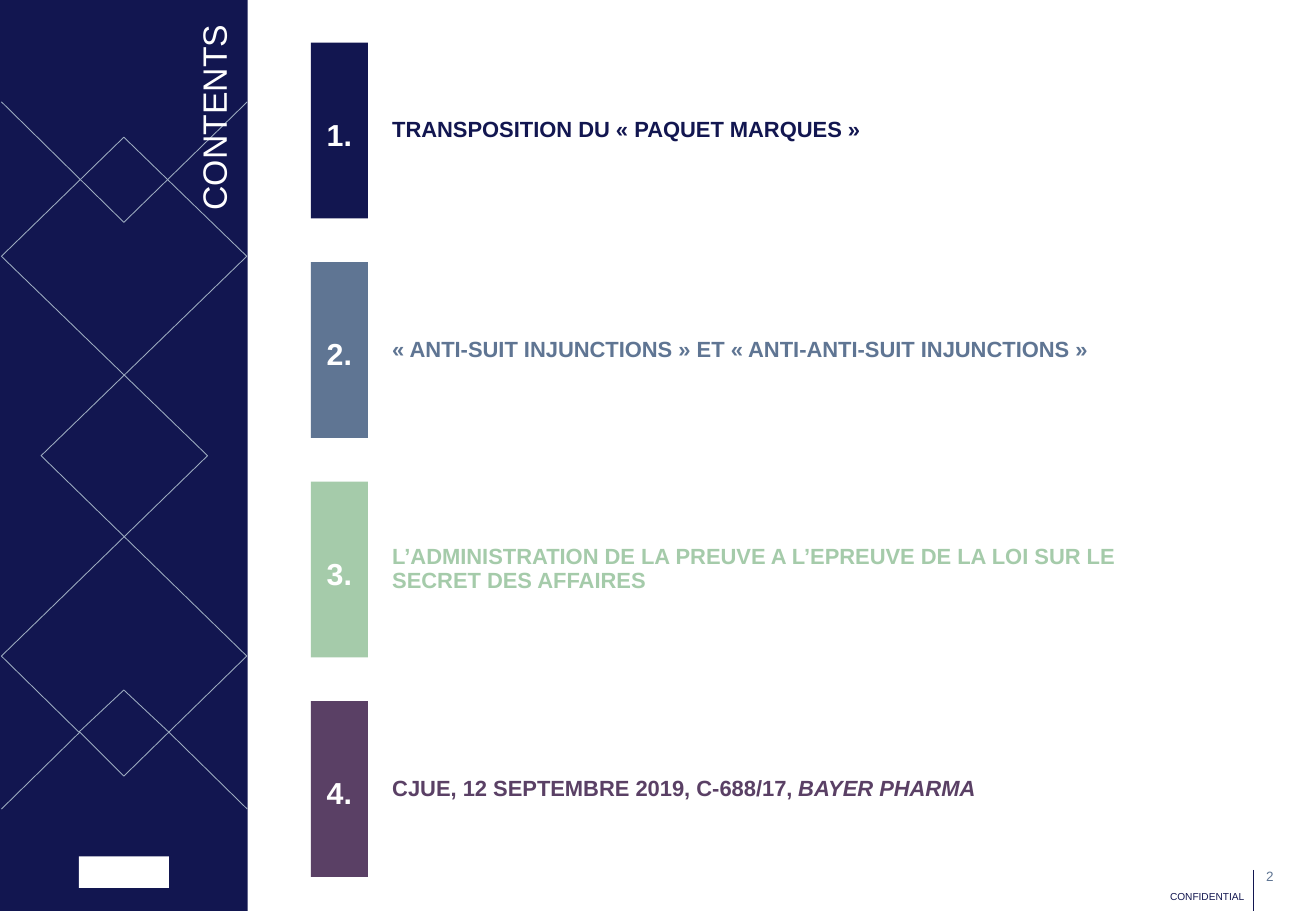
from lxml import etree
from pptx import Presentation
from pptx.dml.color import RGBColor
from pptx.enum.shapes import MSO_CONNECTOR, MSO_SHAPE
from pptx.enum.text import MSO_ANCHOR, PP_ALIGN
from pptx.oxml.ns import qn
from pptx.util import Cm, Pt

RECTANGLE = MSO_SHAPE.RECTANGLE
STRAIGHT = MSO_CONNECTOR.STRAIGHT
TOP, MIDDLE, BOTTOM = MSO_ANCHOR.TOP, MSO_ANCHOR.MIDDLE, MSO_ANCHOR.BOTTOM
LEFT, CENTER, RIGHT = PP_ALIGN.LEFT, PP_ALIGN.CENTER, PP_ALIGN.RIGHT

SLIDE_WIDTH, SLIDE_HEIGHT = 27.51, 19.05
FONT = "Arial"
NAVY, STEEL, GREEN, PLUM = "121650", "5F7593", "A5CBAA", "5A4065"
WHITE, PATTERN = "FFFFFF", "9DACC0"

# Each topic: colour, then its runs as (text, italic)
TOPICS = [
    (NAVY, [("TRANSPOSITION DU « PAQUET MARQUES »", False)]),
    (STEEL, [("« ANTI-SUIT INJUNCTIONS » ET « ANTI-ANTI-SUIT INJUNCTIONS »", False)]),
    (GREEN, [("L’ADMINISTRATION DE LA PREUVE A L’EPREUVE DE LA LOI SUR LE "
              "SECRET DES AFFAIRES", False)]),
    (PLUM, [("CJUE, 12 SEPTEMBRE 2019, C-688/17, ", False), ("BAYER PHARMA", True)]),
]

# Diamond pattern in cm from the sidebar's corner: points, closed
PATTERN_LINES = [
    ([(5.17, 2.13), (2.59, 4.65), (0.03, 2.13)], False),
    ([(0.03, 16.92), (1.67, 15.31), (2.59, 16.23), (3.53, 15.31), (5.17, 16.92)], False),
    ([(0.03, 5.36), (4.34, 9.53), (0.03, 13.72), (1.65, 15.31), (2.59, 14.43),
      (3.53, 15.31), (5.16, 13.72), (0.86, 9.53), (5.16, 5.36), (2.59, 2.87)], True),
]


def rgb(value):
    return RGBColor.from_string(value)


def write(shape, runs, size, color, bold=False, align=LEFT, anchor=TOP, spacing=1.0):
    frame = shape.text_frame
    frame.word_wrap = True
    frame.vertical_anchor = anchor
    frame.margin_left = frame.margin_top = frame.margin_right = frame.margin_bottom = 0
    paragraph = frame.paragraphs[0]
    paragraph.alignment = align
    paragraph.line_spacing = spacing
    for text, italic in runs:
        run = paragraph.add_run()
        run.text = text
        run.font.name = FONT
        run.font.size = Pt(size)
        run.font.bold = bold
        run.font.italic = italic
        run.font.color.rgb = rgb(color)


def add_label(slide, left, top, width, height, runs, size, color, **style):
    label = slide.shapes.add_textbox(Cm(left), Cm(top), Cm(width), Cm(height))
    write(label, runs, size, color, **style)
    return label


def add_block(slide, left, top, width, height, color):
    block = slide.shapes.add_shape(RECTANGLE, Cm(left), Cm(top), Cm(width), Cm(height))
    block.shadow.inherit = False
    block.fill.solid()
    block.fill.fore_color.rgb = rgb(color)
    block.line.fill.background()
    return block


def add_sidebar(slide, left, top, width, height):
    add_block(slide, left, top, width, height, NAVY)

    # Diamond pattern
    for points, closed in PATTERN_LINES:
        start, *rest = [(Cm(left + x), Cm(top + y)) for x, y in points]
        builder = slide.shapes.build_freeform(*start)
        builder.add_line_segments(rest, close=closed)
        diamonds = builder.convert_to_shape()
        diamonds.shadow.inherit = False
        diamonds.fill.background()
        diamonds.line.color.rgb = rgb(PATTERN)
        diamonds.line.width = Pt(0.5)

    # Vertical heading
    heading = add_label(slide, left + 2.37, top + 1.87, 4.2, 0.86,
                        [("CONTENTS", False)], 20, WHITE)
    heading.rotation = 270

    # Emblem
    emblem_width = 1.88
    add_block(slide, left + (width - emblem_width) / 2, top + height - 1.14,
              emblem_width, 0.66, WHITE)


def add_agenda(slide, left, top, width, height):
    row_height, number_width, gap = 3.68, 1.19, 0.51
    pitch = (height - row_height) / (len(TOPICS) - 1)
    title_offset = number_width + gap
    for index, (color, title) in enumerate(TOPICS):
        row_top = top + index * pitch
        number = add_block(slide, left, row_top, number_width, row_height, color)
        write(number, [(f"{index + 1}.", False)], 18, WHITE, bold=True,
              align=CENTER, anchor=MIDDLE, spacing=1.2)
        add_label(slide, left + title_offset, row_top, width - title_offset, row_height,
                  title, 13, color, bold=True, anchor=MIDDLE, spacing=0.9)


def add_footer(slide, left, top, width, height):
    divider_x = left + width - 0.77
    add_label(slide, left, top + 0.46, divider_x - left - 0.2, 0.25,
              [("CONFIDENTIAL", False)], 6, NAVY, align=RIGHT)

    # Divider
    divider = slide.shapes.add_connector(STRAIGHT, Cm(divider_x), Cm(top + 0.03),
                                         Cm(divider_x), Cm(top + height))
    divider.line.color.rgb = rgb(NAVY)
    divider.line.width = Pt(0.5)
    etree.SubElement(divider._element.spPr, qn("a:effectLst"))

    # Page number
    add_label(slide, divider_x + 0.26, top, 0.51, 0.33,
              [("2", False)], 8, STEEL, anchor=BOTTOM)


def main():
    deck = Presentation()
    deck.slide_width, deck.slide_height = Cm(SLIDE_WIDTH), Cm(SLIDE_HEIGHT)
    slide = deck.slides.add_slide(deck.slide_layouts[6])
    add_sidebar(slide, 0, 0, 5.18, SLIDE_HEIGHT)
    add_footer(slide, 24, 18.16, 2.98, SLIDE_HEIGHT - 18.16)
    add_agenda(slide, 6.5, 0.89, 18.54, 17.45)
    deck.save("out.pptx")


if __name__ == "__main__":
    main()
